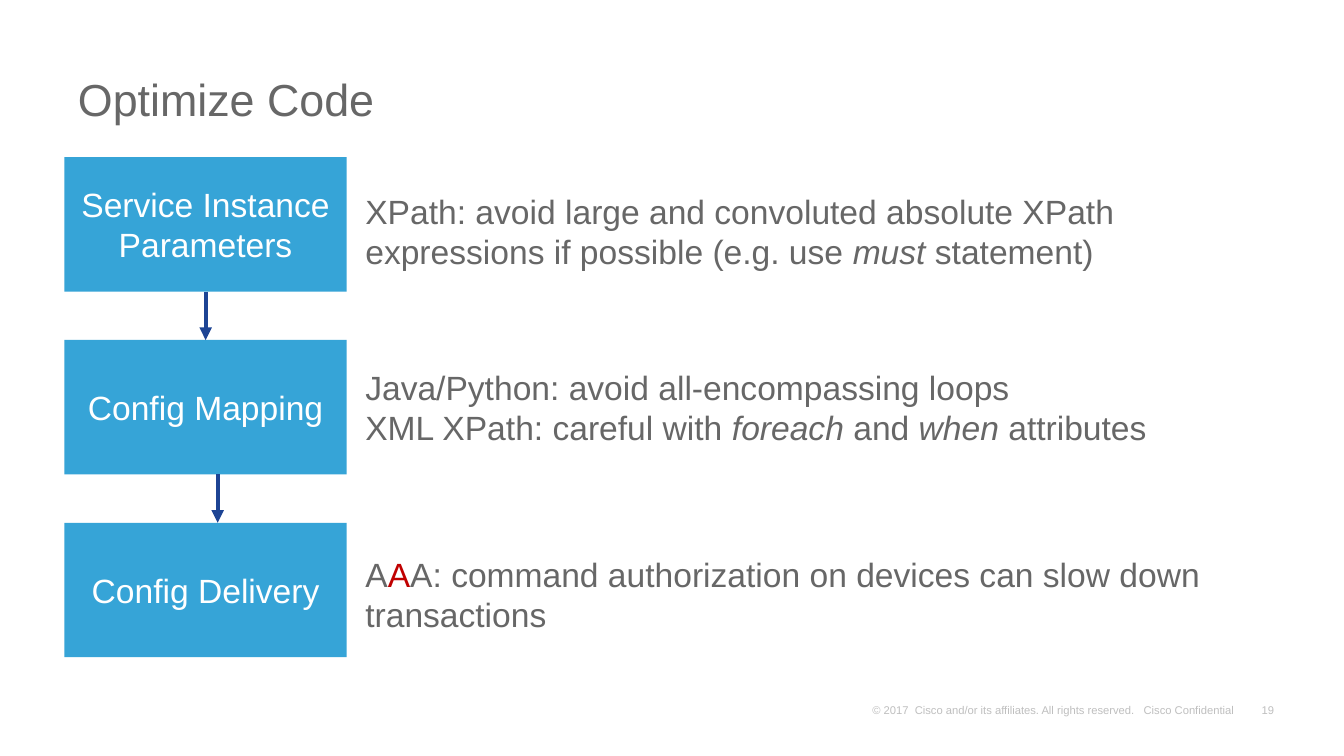
"""Build the "Optimize Code" slide: three processing stages with tuning advice."""
from lxml.etree import SubElement
from pptx import Presentation
from pptx.dml.color import RGBColor
from pptx.enum.shapes import MSO_CONNECTOR as Connector, MSO_SHAPE as Shape
from pptx.enum.text import MSO_ANCHOR as Anchor, MSO_AUTO_SIZE as AutoSize, PP_ALIGN as Align
from pptx.oxml.ns import qn
from pptx.util import Inches, Pt

GRAY = RGBColor(0x67, 0x67, 0x67)
LIGHT_GRAY = RGBColor(0xBF, 0xBF, 0xBF)
BLUE = RGBColor(0x36, 0xA4, 0xD7)
NAVY = RGBColor(0x1D, 0x44, 0x94)
RED = RGBColor(0xC0, 0x00, 0x00)
WHITE = RGBColor(0xFF, 0xFF, 0xFF)

TITLE = "Optimize Code"
STAGES = [
    {"name": "Service Instance Parameters", "top": 1.37, "width": 6.99, "wrap": True, "advice": [
        [("XPath: avoid large and convoluted absolute XPath expressions if possible (e.g. use ", ""),
         ("must", "italic"), (" statement)", "")],
    ]},
    {"name": "Config Mapping", "top": 2.68, "width": 6.07, "wrap": False, "advice": [
        [("Java/Python: avoid all-encompassing loops", "")],
        [("XML XPath: careful with ", ""), ("foreach", "italic"), (" and ", ""),
         ("when", "italic"), (" attributes", "")],
    ]},
    {"name": "Config Delivery", "top": 4.07, "width": 6.99, "wrap": True, "advice": [
        [("A", ""), ("A", "red"), ("A: command authorization on devices can slow down transactions", "")],
    ]},
]
ARROW_CENTERS = [1.53, 1.62]
FOOTERS = [
    ("19", 9.31, 0.24, Align.RIGHT, False),
    ("© 2017  Cisco and/or its affiliates. All rights reserved.   Cisco Confidential",
     6.42, 2.91, Align.LEFT, True),
]

LEFT, FIRST_TOP, PITCH = 0.48, 1.17, 1.36
BOX_WIDTH, BOX_HEIGHT = 2.1, 1
ADVICE_LEFT, ADVICE_HEIGHT = 2.62, 0.71


def style_font(font, size, color):
    font.name = "Arial"
    font.size = Pt(size)
    font.color.rgb = color


def add_title(slide):
    title = slide.shapes.title
    title.left, title.top = Inches(LEFT), Inches(0.37)
    title.width, title.height = Inches(9.13), Inches(0.8)
    title.text_frame.text = TITLE
    title.text_frame.vertical_anchor = Anchor.MIDDLE
    paragraph = title.text_frame.paragraphs[0]
    paragraph.alignment = Align.LEFT
    paragraph.line_spacing = 0.8
    style_font(paragraph.runs[0].font, 24, GRAY)


def add_stage(slide, name, top):
    box = slide.shapes.add_shape(
        Shape.RECTANGLE, Inches(LEFT), Inches(top), Inches(BOX_WIDTH), Inches(BOX_HEIGHT))
    box.shadow.inherit = False
    box.fill.solid()
    box.fill.fore_color.rgb = BLUE
    box.line.fill.background()
    box.text_frame.text = name
    box.text_frame.word_wrap = True
    box.text_frame.vertical_anchor = Anchor.MIDDLE
    paragraph = box.text_frame.paragraphs[0]
    paragraph.alignment = Align.CENTER
    style_font(paragraph.runs[0].font, 18, WHITE)


def add_text_frame(slide, left, top, width, height, wrap):
    box = slide.shapes.add_textbox(Inches(left), Inches(top), Inches(width), Inches(height))
    box.text_frame.word_wrap = wrap
    box.text_frame.auto_size = AutoSize.SHAPE_TO_FIT_TEXT
    return box.text_frame


def add_advice(slide, stage):
    frame = add_text_frame(
        slide, ADVICE_LEFT, stage["top"], stage["width"], ADVICE_HEIGHT, stage["wrap"])
    for index, line in enumerate(stage["advice"]):
        paragraph = frame.add_paragraph() if index else frame.paragraphs[0]
        for text, emphasis in line:
            run = paragraph.add_run()
            run.text = text
            style_font(run.font, 18, RED if emphasis == "red" else GRAY)
            run.font.italic = emphasis == "italic"


def add_arrow(slide, center, top, bottom):
    arrow = slide.shapes.add_connector(
        Connector.STRAIGHT, Inches(center), Inches(top), Inches(center), Inches(bottom))
    arrow.line.color.rgb = NAVY
    arrow.line.width = Pt(2.25)
    SubElement(arrow.line._get_or_add_ln(), qn("a:tailEnd"), type="triangle")
    SubElement(arrow._element.spPr, qn("a:effectLst"))


def add_footer(slide, text, left, width, alignment, wrap):
    frame = add_text_frame(slide, left, 5.19, width, 0.17, wrap)
    frame.text = text
    frame.vertical_anchor = Anchor.BOTTOM
    frame.margin_left = frame.margin_right = Inches(0.07)
    frame.margin_top = frame.margin_bottom = Inches(0.03)
    paragraph = frame.paragraphs[0]
    paragraph.alignment = alignment
    style_font(paragraph.runs[0].font, 6, LIGHT_GRAY)


def main():
    presentation = Presentation()
    presentation.slide_width = Inches(10)
    presentation.slide_height = presentation.slide_width * 9 // 16
    slide = presentation.slides.add_slide(presentation.slide_layouts[5])
    add_title(slide)
    for index, stage in enumerate(STAGES):
        add_stage(slide, stage["name"], FIRST_TOP + index * PITCH)
        add_advice(slide, stage)
    for index, center in enumerate(ARROW_CENTERS):
        top = FIRST_TOP + index * PITCH
        add_arrow(slide, center, top + BOX_HEIGHT, top + PITCH)
    for footer in FOOTERS:
        add_footer(slide, *footer)
    presentation.save("out.pptx")


if __name__ == "__main__":
    main()
